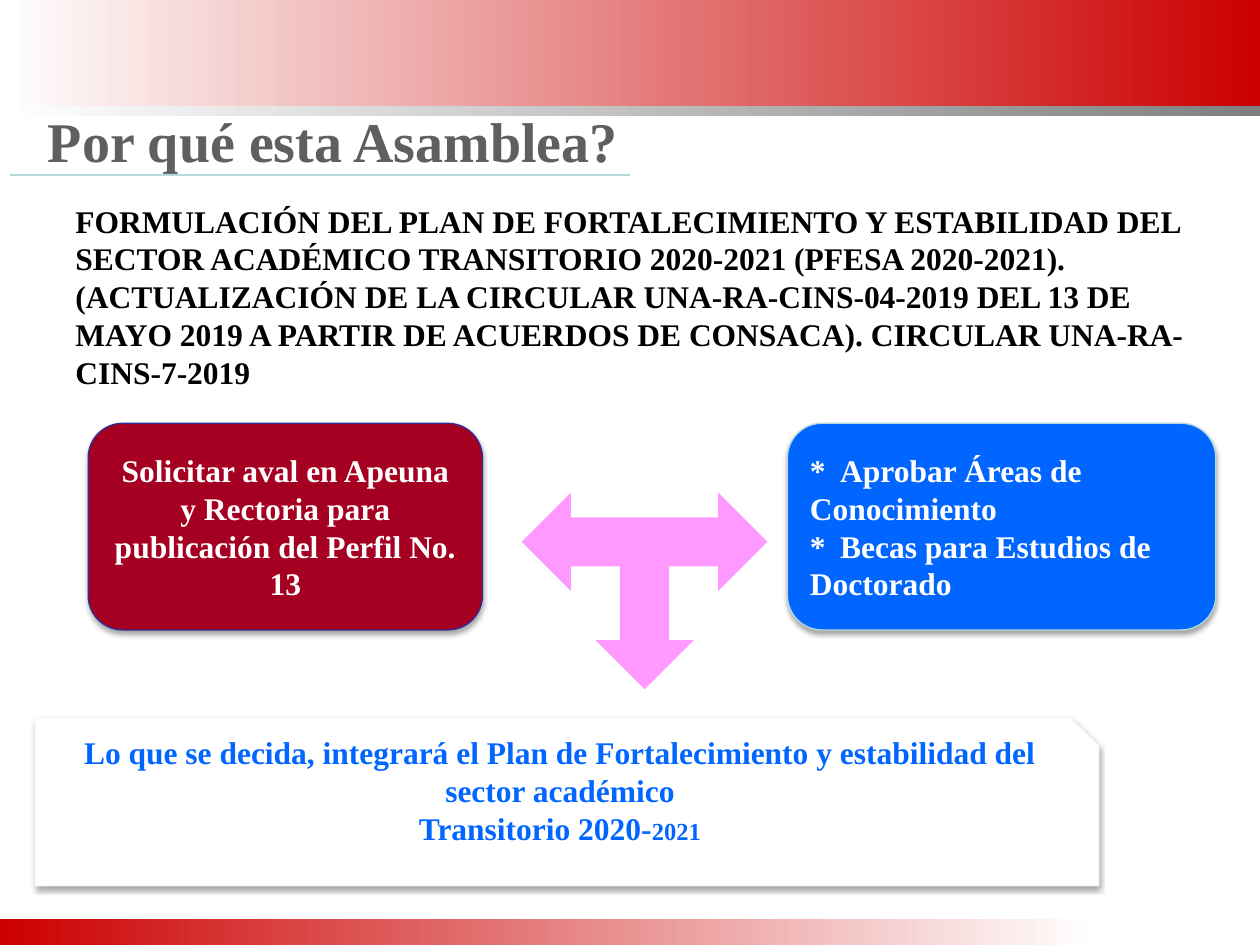
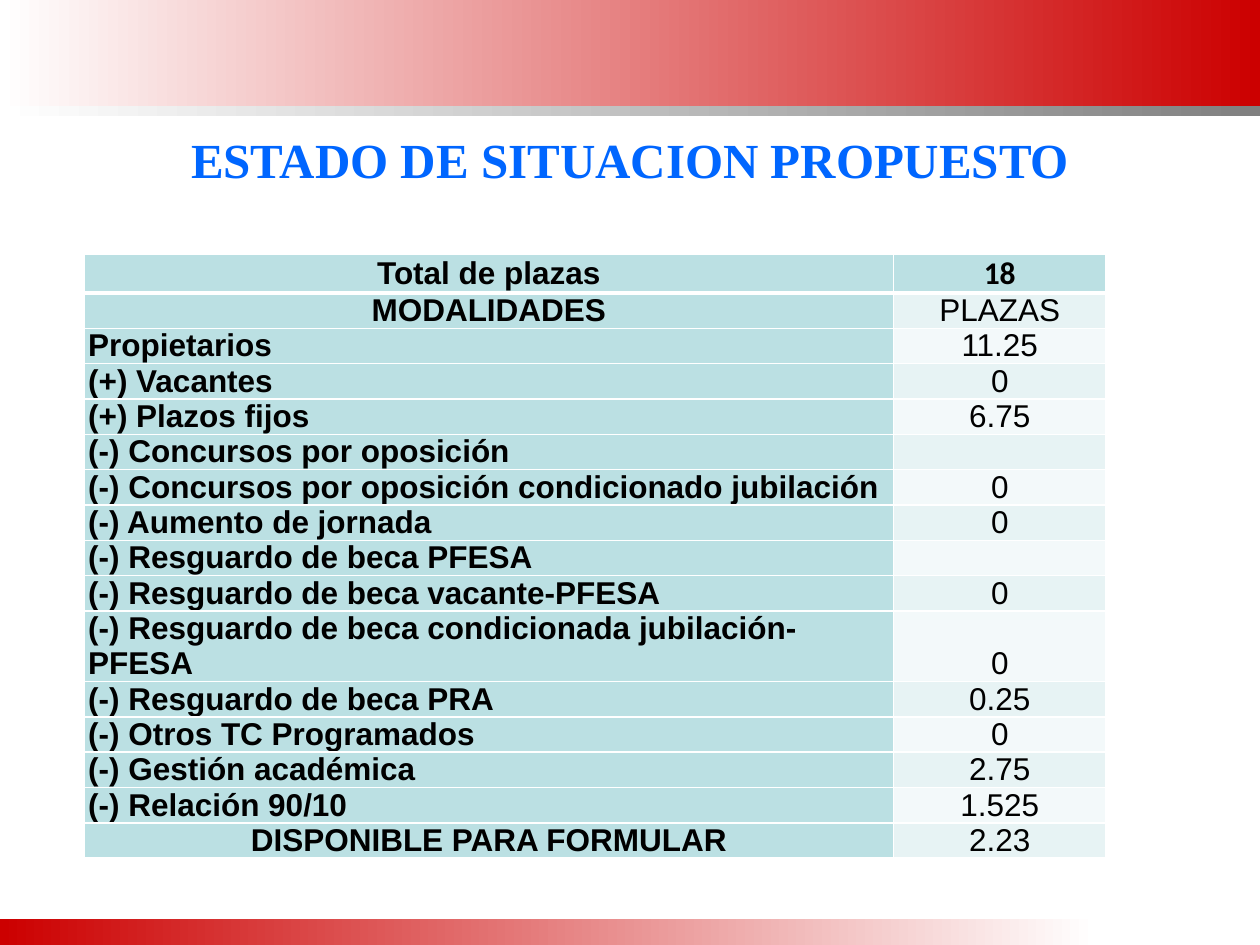
import dataclasses

import pptx
import pptx.dml.color
import pptx.enum.shapes
import pptx.enum.text
import pptx.oxml
import pptx.oxml.ns
import pptx.util

RGB = pptx.dml.color.RGBColor.from_string
PT = pptx.util.Pt
KIND = pptx.enum.shapes.MSO_SHAPE
ALIGN = pptx.enum.text.PP_ALIGN
ANCHOR = pptx.enum.text.MSO_ANCHOR
NS = pptx.oxml.ns.nsdecls("a")


@dataclasses.dataclass(frozen=True)
class Theme:
    serif: str = "Times New Roman"
    sans: str = "Arial"
    alt: str = "Calibri"
    head: int = 32
    sub: int = 28
    body: int = 18
    small: int = 14
    red: str = "CC0000"
    wine: str = "A50021"
    navy: str = "2E2E97"
    blue: str = "0066FF"
    pink: str = "FF99FF"
    gray: str = "808080"
    slate: str = "5F5F5F"
    teal: str = "BBE0E3"
    line: str = "B5DADD"
    mist: str = "E7F3F4"
    ice: str = "F3F9FA"
    pale: str = "F9F9F9"
    white: str = "FFFFFF"
    black: str = "000000"


T = Theme()
deck = pptx.Presentation()
deck.slide_width = pptx.util.Inches(10)
deck.slide_height = pptx.util.Inches(7.5)
COL = deck.slide_width / 100
ROW = deck.slide_height / 75


def grid(col, row, wide, high):
    """Turn a box on the grid of 100 columns and 75 rows into lengths."""
    return int(col * COL), int(row * ROW), int(wide * COL), int(high * ROW)


def write(frame, paras, color, align=ALIGN.LEFT, face=T.serif, bold=True):
    """Fill a frame; each paragraph is a list of (text, size) runs."""
    for i, runs in enumerate(paras):
        para = frame.paragraphs[0] if i == 0 else frame.add_paragraph()
        para.alignment = align
        for text, size in runs:
            run = para.add_run()
            run.text = text
            run.font.name = face
            run.font.size = PT(size)
            run.font.bold = bold
            run.font.color.rgb = RGB(color)


# Bands shared by both slides, kept in the layout
layout = deck.slide_layouts[5]
why = deck.slides.add_slide(layout)
bands = [
    (0, 0, 100, 8.4, T.white, T.red),
    (0, 8.4, 100, 0.8, T.white, T.gray),
    (0, 72.9, 87, 2.1, T.red, T.white),
]
for i, (*area, start, end) in enumerate(bands):
    band = why.shapes.add_shape(KIND.RECTANGLE, *grid(*area))
    band.shadow.inherit = False
    band.line.fill.background()
    band.fill.gradient()
    band.fill.gradient_angle = 0
    for stop, place, color in zip(band.fill.gradient_stops, (0, 1), (start, end)):
        stop.position = place
        stop.color.rgb = RGB(color)
    layout.element.cSld.spTree.insert(2 + i, band.element)

# Titles
state = deck.slides.add_slide(layout)
titles = [
    (why, (2.8, 6.8, 83.5, 8.6), "Por qué esta Asamblea?", T.head, T.slate, ALIGN.LEFT),
    (state, (5, 9.9, 90, 5.5), "ESTADO DE SITUACION PROPUESTO", T.sub, T.blue, ALIGN.CENTER),
]
for slide, area, text, size, color, align in titles:
    title = slide.shapes.title
    title.left, title.top, title.width, title.height = grid(*area)
    frame = title.text_frame
    frame.auto_size = pptx.enum.text.MSO_AUTO_SIZE.NONE
    frame.vertical_anchor = ANCHOR.MIDDLE
    write(frame, [[(text, size)]], color, align)

# Slide 1: reasons for the assembly
intro = why.shapes.add_textbox(*grid(5, 15.5, 90, 16.5)).text_frame
intro.word_wrap = True
write(intro, [[(
    "FORMULACIÓN DEL PLAN DE FORTALECIMIENTO Y ESTABILIDAD DEL SECTOR ACADÉMICO "
    "TRANSITORIO 2020-2021 (PFESA 2020-2021). (ACTUALIZACIÓN DE LA CIRCULAR "
    "UNA-RA-CINS-04-2019 DEL 13 DE MAYO 2019 A PARTIR DE ACUERDOS DE CONSACA). "
    "CIRCULAR UNA-RA-CINS-7-2019", T.body)]], T.black)

cards = [
    (KIND.ROUNDED_RECTANGLE, (7, 33.6, 31.3, 16.4), T.wine, T.navy, T.white, ALIGN.CENTER, 0.5,
     [[("Solicitar aval en Apeuna y Rectoria para publicación del Perfil No. 13", T.body)]]),
    (KIND.ROUNDED_RECTANGLE, (62.5, 33.6, 34, 16.4), T.blue, T.line, T.white, ALIGN.LEFT, 0.5,
     [[("*\tAprobar Áreas de Conocimiento", T.body)],
      [("*\tBecas para Estudios de Doctorado", T.body)]]),
    (KIND.SNIP_1_RECTANGLE, (2.8, 57, 84.4, 13.3), T.white, T.pale, T.blue, ALIGN.CENTER, 3.5,
     [[("Lo que se decida, integrará el Plan de Fortalecimiento y estabilidad "
        "del sector académico", T.body)],
      [("Transitorio 2020-", T.body), ("2021", T.small)]]),
]
for kind, area, fill, edge, ink, align, foot, paras in cards:
    card = why.shapes.add_shape(kind, *grid(*area))
    card.fill.solid()
    card.fill.fore_color.rgb = RGB(fill)
    card.line.color.rgb = RGB(edge)
    card.line.width = PT(0.75)
    card.shadow.inherit = False
    card.element.spPr.find(pptx.oxml.ns.qn("a:effectLst")).append(pptx.oxml.parse_xml(
        f'<a:outerShdw {NS} blurRad="{PT(3.1)}" dist="{PT(1.8)}" dir="5400000" rotWithShape="0">'
        f'<a:srgbClr val="{T.black}"><a:alpha val="35000"/></a:srgbClr></a:outerShdw>'))
    frame = card.text_frame
    frame.word_wrap = True
    frame.vertical_anchor = ANCHOR.MIDDLE
    frame.margin_bottom = int(foot * ROW)
    write(frame, paras, ink, align)
    for para in frame.paragraphs:
        if "\t" in para.text:
            para._p.get_or_add_pPr().append(pptx.oxml.parse_xml(
                f'<a:tabLst {NS}><a:tab pos="{int(2.4 * COL)}" algn="l"/></a:tabLst>'))

arrow = why.shapes.add_shape(KIND.LEFT_RIGHT_UP_ARROW, *grid(41.4, 39.1, 19.5, 15.6))
arrow.rotation = 180
arrow.shadow.inherit = False
arrow.fill.solid()
arrow.fill.fore_color.rgb = RGB(T.pink)
arrow.line.fill.background()

left, top, wide, high = grid(0.8, 13.9, 49.2, 0)
rule = why.shapes.add_connector(
    pptx.enum.shapes.MSO_CONNECTOR.STRAIGHT, left, top, left + wide, top)
rule.line.color.rgb = RGB(T.line)
rule.line.width = PT(0.75)
rule.element.spPr.append(pptx.oxml.parse_xml(f"<a:effectLst {NS}/>"))

# Slide 2: table of posts
posts = [
    ("Total de plazas", "18"),
    ("MODALIDADES", "PLAZAS"),
    ("Propietarios", "11.25"),
    ("(+) Vacantes", "0"),
    ("(+) Plazos fijos", "6.75"),
    ("(-) Concursos por oposición", ""),
    ("(-) Concursos por oposición condicionado jubilación", "0"),
    ("(-) Aumento de jornada", "0"),
    ("(-) Resguardo de beca PFESA", ""),
    ("(-) Resguardo de beca vacante-PFESA", "0"),
    ("(-) Resguardo de beca condicionada jubilación-PFESA", "0"),
    ("(-) Resguardo de beca PRA", "0.25"),
    ("(-) Otros TC Programados", "0"),
    ("(-) Gestión académica", "2.75"),
    ("(-) Relación 90/10", "1.525"),
    ("DISPONIBLE PARA FORMULAR", "2.23"),
]
area = grid(6.7, 20.2, 81.1, 2.8 * len(posts))
table = state.shapes.add_table(len(posts), 2, *area).table
for col, wide in zip(table.columns, (64.2, 16.9)):
    col.width = int(wide * COL)
for r, post in enumerate(posts):
    table.rows[r].height = int(2.8 * ROW)
    mid = r in (0, 1, len(posts) - 1)
    for c, text in enumerate(post):
        cell = table.cell(r, c)
        cell.margin_left = cell.margin_right = int(0.3 * COL)
        cell.margin_top = cell.margin_bottom = 0
        cell.vertical_anchor = ANCHOR.MIDDLE if mid else ANCHOR.BOTTOM
        key = r == 0 or c == 0
        cell.fill.solid()
        cell.fill.fore_color.rgb = RGB(T.teal if key else T.mist if r % 2 else T.ice)
        write(cell.text_frame, [[(text, T.body)]], T.black,
              ALIGN.CENTER if mid or c else ALIGN.LEFT,
              T.alt if r == 0 and c else T.sans, key)
        for i, side in enumerate("LRTB"):
            thick = (r, side) in ((0, "B"), (1, "T"))
            cell._tc.get_or_add_tcPr().insert(i, pptx.oxml.parse_xml(
                f'<a:ln{side} {NS} w="{PT(3 if thick else 1)}"><a:solidFill>'
                f'<a:srgbClr val="{T.white}"/></a:solidFill></a:ln{side}>'))

deck.save("out.pptx")
